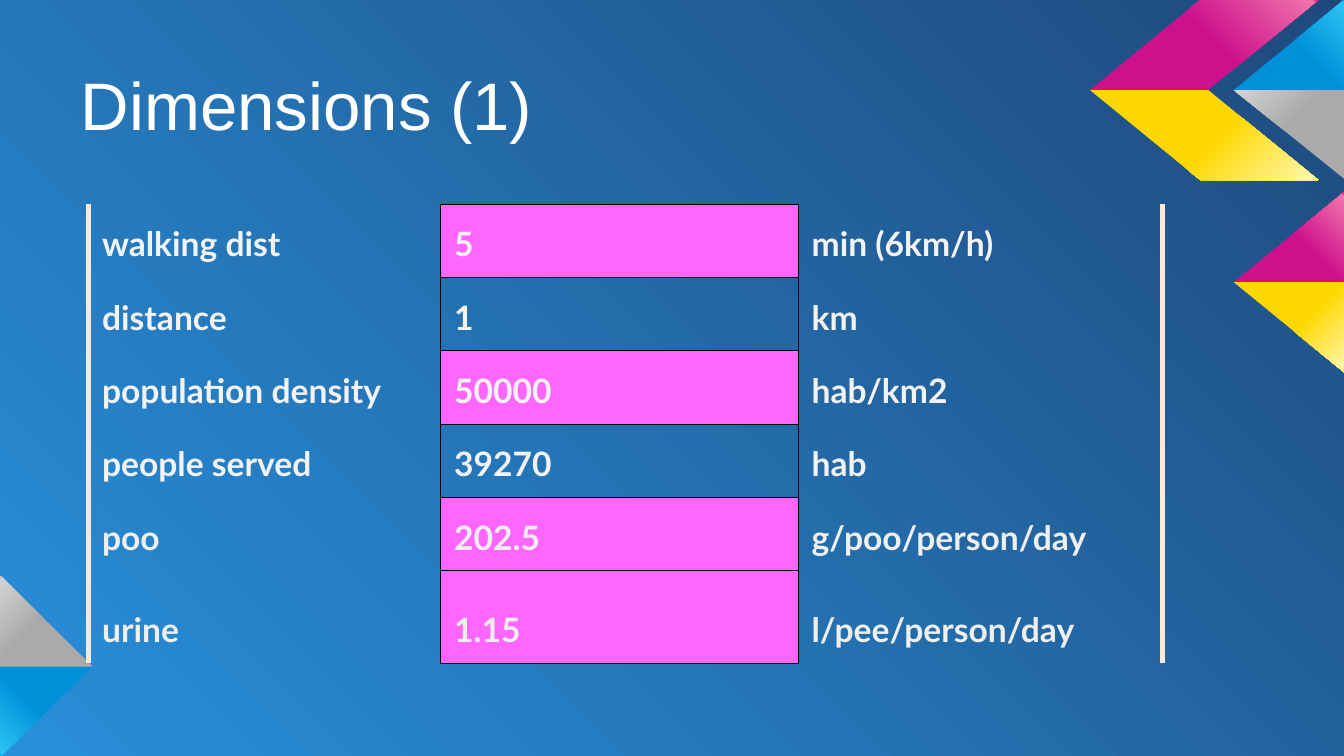
"""Build the Dimensions slide: decorated blue ground, title and value table."""
from lxml import etree
from pptx import Presentation
from pptx import util as u
from pptx.dml.color import RGBColor
from pptx.enum import text
from pptx.oxml import parse_xml
from pptx.oxml.ns import nsdecls, qn

WHITE = RGBColor(0xFF, 0xFF, 0xFF)
PALE = RGBColor(0xF3, 0xF3, 0xF3)
SOFT = RGBColor(0xEF, 0xEF, 0xEF)
PINK = RGBColor(0xFF, 0x66, 0xFF)
BLACK = RGBColor(0x00, 0x00, 0x00)
CREAM = RGBColor(0xFD, 0xE9, 0xD9)
GROUND = [(0, RGBColor(0x28, 0x90, 0xDA)), (100, RGBColor(0x1F, 0x49, 0x7D))]
WIDE = 10
DEEP = WIDE * 9 / 16


def ramp(base, glow, edge):
    """Return the four stops shared by all facets."""
    return list(zip((0, 54, 98, 100), (base, base, glow, edge)))


BLUE = ramp(RGBColor(0x00, 0x90, 0xDA), RGBColor(0x2B, 0xC4, 0xF3), RGBColor(0x00, 0xAE, 0xEE))
GREY = ramp(RGBColor(0xAA, 0xAA, 0xAA), RGBColor(0xD2, 0xD2, 0xD2), RGBColor(0xB9, 0xB9, 0xB9))
ROSE = ramp(RGBColor(0xCD, 0x11, 0x8C), RGBColor(0xF0, 0x74, 0xAC), RGBColor(0xEB, 0x00, 0x8B))
GOLD = ramp(RGBColor(0xFF, 0xD7, 0x00), RGBColor(0xFF, 0xF7, 0xA9), RGBColor(0xFF, 0xF1, 0x00))

FACETS = [
    (BLUE, 135, [(0.69, 4.96), (0, 4.96), (0, DEEP), (0.01, DEEP)]),
    (GREY, 225, [(0.69, 4.96), (0.01, 4.29), (0, 4.29), (0, 4.96)]),
    (BLUE, 315, [(WIDE, 0), (9.18, 0.67), (WIDE, 0.67)]),
    (GREY, 225, [(9.18, 0.67), (WIDE, 1.33), (WIDE, 0.67)]),
    (ROSE, 315, [(8.99, 0.67), (9.81, 0), (8.93, 0), (8.11, 0.67)]),
    (ROSE, 315, [(WIDE, 1.43), (9.18, 2.1), (WIDE, 2.1)]),
    (GOLD, 45, [(9.18, 2.1), (WIDE, 2.77), (WIDE, 2.1)]),
    (GOLD, 45, [(8.99, 0.67), (9.81, 1.34), (8.93, 1.34), (8.11, 0.67)]),
]

ROWS = [
    ("walking dist", "5", "min (6km/h)", PINK, PALE),
    ("distance", "1", "km", None, PALE),
    ("population density", "50000", "hab/km2", PINK, PALE),
    ("people served", "39270", "hab", None, PALE),
    ("poo", "202.5", "g/poo/person/day", PINK, SOFT),
    ("urine", "1.15", "l/pee/person/day", PINK, SOFT),
]
WIDTHS = (2.62, 2.66, 2.71)
HIGH, LAST = 0.54, 0.69


def blend(item, stops, angle=None):
    """Fill a shape or slide with a linear, or else a corner, gradient."""
    fill = item.fill if angle is not None else item.background.fill
    fill.gradient()
    if angle is None:
        way = '<a:path path="circle"><a:fillToRect t="100000" r="100000"/></a:path>'
    else:
        way = f'<a:lin ang="{angle * 60000}" scaled="0"/>'
    marks = "".join(f'<a:gs pos="{pos * 1000}"><a:srgbClr val="{tint}"/></a:gs>' for pos, tint in stops)
    old = item._element.find(".//" + qn("a:gradFill"))
    new = parse_xml(f'<a:gradFill {nsdecls("a")} rotWithShape="1"><a:gsLst>{marks}</a:gsLst>{way}</a:gradFill>')
    old.getparent().replace(old, new)


def facet(slide, stops, angle, points):
    """Draw one gradient polygon."""
    dots = [(u.Inches(x), u.Inches(y)) for x, y in points]
    pen = slide.shapes.build_freeform(*dots[0], scale=1.0)
    pen.add_line_segments(dots[1:], close=True)
    shape = pen.convert_to_shape()
    shape.shadow.inherit = False
    shape.line.fill.background()
    blend(shape, stops, angle)


def write(frame, words, size=18, font="Lato", tint=PALE, bold=False, space=1.0):
    """Put one formatted paragraph in a text frame."""
    frame.text = words
    para = frame.paragraphs[0]
    para.alignment = text.PP_ALIGN.LEFT
    para.line_spacing = space
    face = para.runs[0].font
    face.size, face.name, face.bold = u.Pt(size), font, bold
    face.color.rgb = tint


def edge(cell, **sides):
    """Add cell borders given as side=(colour, points)."""
    props = cell._tc.get_or_add_tcPr()
    names = [side for side in "LRTB" if side in sides]
    for spot, side in enumerate(names):
        tint, width = sides[side]
        line = etree.Element(qn(f"a:ln{side}"), w=str(u.Pt(width)))
        solid = etree.SubElement(line, qn("a:solidFill"))
        etree.SubElement(solid, qn("a:srgbClr"), val=str(tint))
        props.insert(spot, line)


def title(slide, words):
    """Place and format the title."""
    box = slide.shapes.title
    box.left, box.top, box.width, box.height = map(u.Inches, (0.5, 0.23, 7.52, 0.94))
    frame = box.text_frame
    frame.margin_left = frame.margin_right = frame.margin_top = frame.margin_bottom = u.Inches(0.1)
    frame.vertical_anchor = text.MSO_ANCHOR.BOTTOM
    frame.word_wrap = True
    frame.auto_size = text.MSO_AUTO_SIZE.NONE
    write(frame, words, size=36, font="Arial", tint=WHITE)


def grid(slide):
    """Add the table of names, values and units."""
    tall = [HIGH] * (len(ROWS) - 1) + [LAST]
    area = map(u.Inches, (0.66, 1.52, sum(WIDTHS), sum(tall)))
    table = slide.shapes.add_table(len(ROWS), len(WIDTHS), *area).table
    table.first_row = table.horz_banding = False
    table._tbl.tblPr.find(qn("a:tableStyleId")).text = "{2D5ABB26-0587-4C30-8999-92F81FD0307C}"
    for col, width in zip(table.columns, WIDTHS):
        col.width = u.Inches(width)
    thin, thick = (BLACK, 0.75), (CREAM, 3)
    rims = (dict(L=thick, R=thin), dict.fromkeys("LRTB", thin), dict(L=thin, R=thick))
    for row, high, (*words, fill, tint) in zip(table.rows, tall, ROWS):
        row.height = u.Inches(high)
        for cell, word, rim in zip(row.cells, words, rims):
            cell.margin_left = cell.margin_right = cell.margin_top = cell.margin_bottom = u.Inches(0.1)
            cell.vertical_anchor = text.MSO_ANCHOR.BOTTOM
            write(cell.text_frame, word, tint=tint, bold=True, space=1.15)
            cell.fill.background()
            edge(cell, **rim)
        if fill:
            value = row.cells[1]
            value.fill.solid()
            value.fill.fore_color.rgb = fill


def main():
    """Build and save the slide."""
    deck = Presentation()
    deck.slide_width, deck.slide_height = u.Inches(WIDE), u.Inches(DEEP)
    slide = deck.slides.add_slide(deck.slide_layouts[5])
    blend(slide, GROUND)
    for stops, angle, points in FACETS:
        facet(slide, stops, angle, points)
    title(slide, "Dimensions (1)")
    grid(slide)
    deck.save("out.pptx")


if __name__ == "__main__":
    main()
